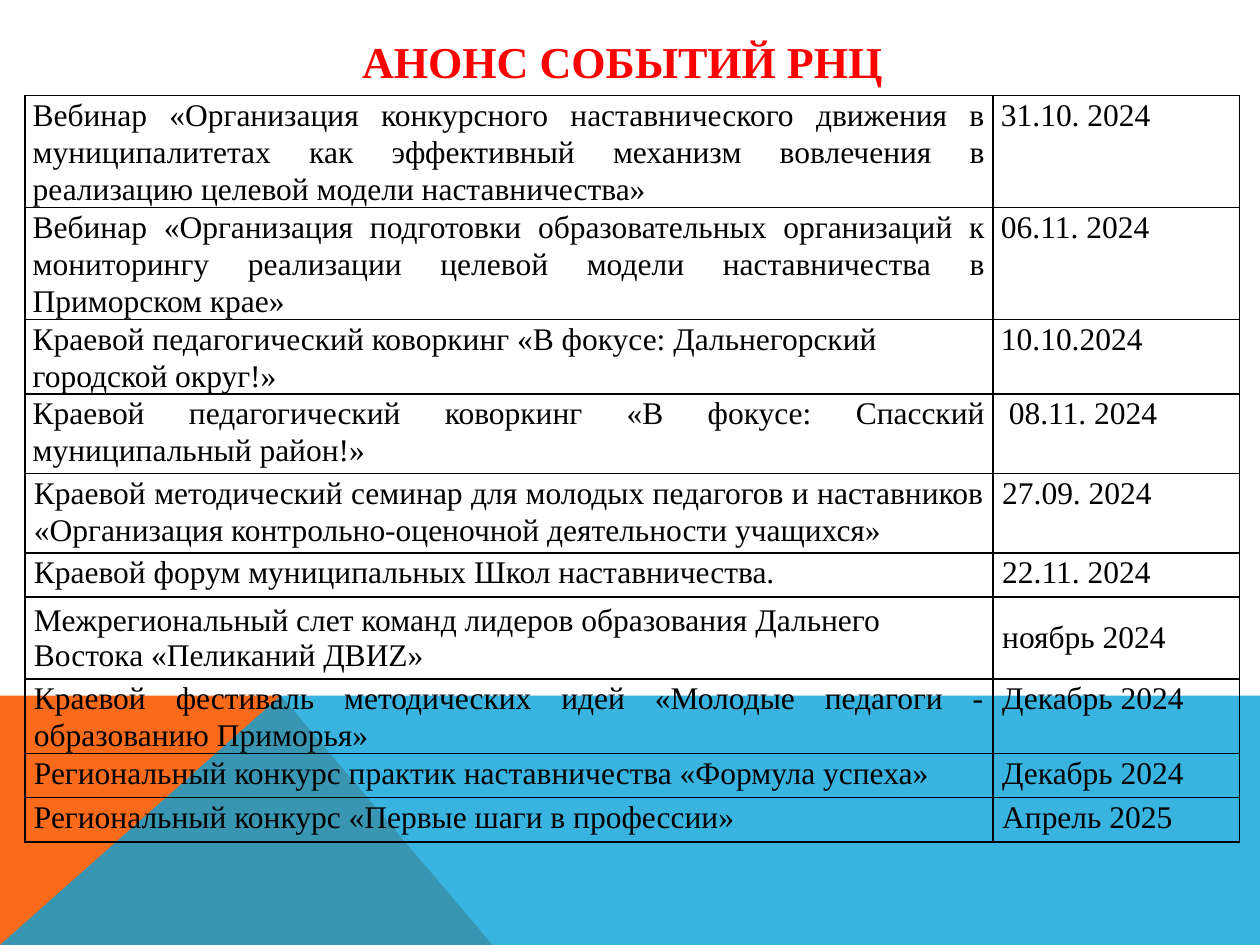
from lxml import etree
from pptx import Presentation
from pptx.dml.color import RGBColor
from pptx.enum.text import MSO_ANCHOR, PP_ALIGN
from pptx.oxml.ns import qn
from pptx.util import Pt

LEFT, JUST, MID = PP_ALIGN.LEFT, PP_ALIGN.JUSTIFY, PP_ALIGN.CENTER
TOP, CENTER = MSO_ANCHOR.TOP, MSO_ANCHOR.MIDDLE

THEME = {
    "font": "Times New Roman", "head": 25.2, "body": 18,
    "red": "FF0000", "ink": "000000", "orange": "F96A1B", "blue": "08A1D9",
}

# Content: event, date, row height, then any format that differs
TITLE = "АНОНС СОБЫТИЙ РНЦ"
EVENTS = [
    ("Вебинар «Организация конкурсного наставнического движения в муниципалитетах "
     "как эффективный механизм вовлечения в реализацию целевой модели наставничества»",
     "31.10. 2024", 62.6, {"pad": 4.5}),
    ("Вебинар «Организация подготовки образовательных организаций к мониторингу "
     "реализации целевой модели наставничества в Приморском крае»",
     "06.11. 2024", 56.9, {"pad": 4.5}),
    ("Краевой педагогический коворкинг «В фокусе: Дальнегорский городской округ!»",
     "10.10.2024", 41.8, {"pad": 4.5, "align": LEFT}),
    ("Краевой педагогический коворкинг «В фокусе: Спасский муниципальный район!»",
     "08.11. 2024", 45.4, {"pad": 4.5, "shift": 4.5}),
    ("Краевой методический семинар для молодых педагогов и наставников "
     "«Организация контрольно-оценочной деятельности учащихся»",
     "27.09. 2024", 45.4, {}),
    ("Краевой форум муниципальных Школ наставничества.", "22.11. 2024", 25.2, {}),
    ("Межрегиональный слет команд лидеров образования Дальнего Востока "
     "«Пеликаний ДВИZ»",
     "ноябрь 2024", 46.8,
     {"align": LEFT, "anchor": CENTER, "line": 1.0, "after": 0}),
    ("Краевой фестиваль методических идей «Молодые педагоги - образованию Приморья»",
     "Декабрь 2024", 41.8, {}),
    ("Региональный конкурс практик наставничества «Формула успеха»",
     "Декабрь 2024", 25.2, {}),
    ("Региональный конкурс «Первые шаги в профессии»", "Апрель 2025", 25.2, {}),
]

# Layout in points
WIDE, HIGH = 720, 540
BAND, PEAK, FOOT = 397.5, 160.5, 281.5
COLS = (553.3, 140.9)
GRID = (14.2, 54.6)


def put_text(frame, text, size=THEME["body"], color=THEME["ink"], bold=False,
             align=JUST, line=1.07, after=8):
    frame.word_wrap = True
    para = frame.paragraphs[0]
    para.alignment, para.line_spacing = align, line
    para.space_before, para.space_after = Pt(0), Pt(after)
    run = para.add_run()
    run.text = text
    font = run.font
    font.name, font.size, font.bold = THEME["font"], Pt(size), bold
    font.color.rgb = RGBColor.from_string(color)


def add_shape(shapes, points, color, alpha=None):
    first, *rest = [(Pt(x), Pt(y)) for x, y in points]
    form = shapes.build_freeform(*first)
    form.add_line_segments(rest, close=True)
    shape = form.convert_to_shape()
    shape.shadow.inherit = False
    shape.line.fill.background()
    shape.fill.solid()
    shape.fill.fore_color.rgb = RGBColor.from_string(color)
    if alpha:
        tint = shape.fill._xPr.find(".//" + qn("a:srgbClr"))
        etree.SubElement(tint, qn("a:alpha"), val=str(alpha * 1000))


def add_edges(cell):
    props = cell._tc.get_or_add_tcPr()
    for side in ("lnL", "lnR", "lnT", "lnB"):
        edge = etree.SubElement(props, qn("a:" + side), w=str(Pt(1)))
        fill = etree.SubElement(edge, qn("a:solidFill"))
        etree.SubElement(fill, qn("a:srgbClr"), val=THEME["ink"])


def fill_cell(cell, text, pad=5.2, shift=0, anchor=TOP, **style):
    add_edges(cell)
    cell.fill.background()
    cell.margin_left, cell.margin_right = Pt(pad + shift), Pt(pad)
    cell.margin_top = cell.margin_bottom = Pt(0)
    cell.vertical_anchor = anchor
    put_text(cell.text_frame, text, **style)


def main():
    deck = Presentation()
    deck.slide_width, deck.slide_height = Pt(WIDE), Pt(HIGH)
    slide = deck.slides.add_slide(deck.slide_layouts[5])
    shapes = slide.shapes

    # Title
    title = shapes.title
    title.left, title.top, title.width, title.height = map(Pt, (59.8, 20.9, 591.8, 28.1))
    frame = title.text_frame
    frame.margin_top = frame.margin_bottom = Pt(0)
    frame.vertical_anchor = CENTER
    put_text(frame, TITLE, size=THEME["head"], color=THEME["red"], bold=True,
             align=MID, line=1.0, after=0)

    # Bottom band
    add_shape(shapes, [(0, HIGH), (0, BAND), (PEAK, BAND), (FOOT, HIGH)], THEME["orange"])
    add_shape(shapes, [(0, HIGH), (PEAK, BAND), (WIDE, BAND), (WIDE, HIGH)],
              THEME["blue"], alpha=80)

    # Table of events
    total = sum(event[2] for event in EVENTS)
    table = shapes.add_table(len(EVENTS), len(COLS), *map(Pt, GRID),
                             Pt(sum(COLS)), Pt(total)).table
    table.first_row = table.horz_banding = False
    for col, width in zip(table.columns, COLS):
        col.width = Pt(width)
    for row, (event, date, height, style) in zip(table.rows, EVENTS):
        row.height = Pt(height)
        fill_cell(row.cells[0], event, **{**style, "shift": 0})
        fill_cell(row.cells[1], date, **style)

    deck.save("out.pptx")


if __name__ == "__main__":
    main()
